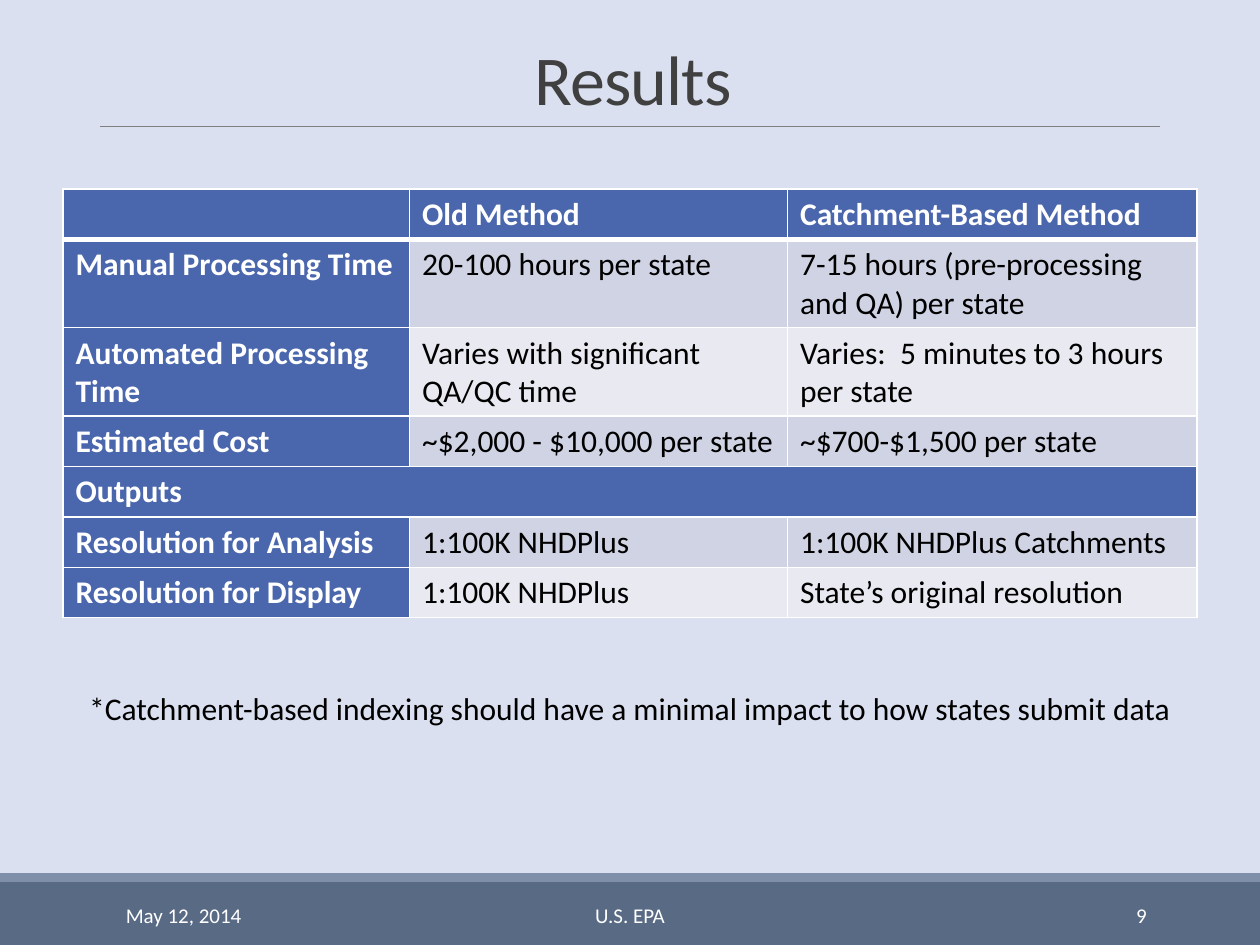
from dataclasses import dataclass

from lxml.etree import SubElement
from pptx import Presentation
from pptx.dml.color import RGBColor
from pptx.enum.shapes import MSO_CONNECTOR as Connector, MSO_SHAPE as Shape
from pptx.enum.text import MSO_ANCHOR as Anchor, PP_ALIGN as Align
from pptx.oxml.ns import qn
from pptx.util import Inches, Pt


@dataclass(frozen=True)
class Theme:
    """Colours, font and type sizes of the deck."""
    font: str = "Calibri"
    background: str = "DAE0EF"
    footer: str = "596A85"
    footer_edge: str = "7F8FA9"
    rule: str = "808080"
    heading: str = "404040"
    ink: str = "000000"
    white: str = "FFFFFF"
    header: str = "4A66AC"
    bands: tuple = ("E9EAF1", "D0D3E3")
    title_size: int = 40
    body_size: int = 18
    footer_size: int = 12


@dataclass(frozen=True)
class Box:
    """A region of the slide, measured in grid columns and rows."""
    left: float
    top: float
    width: float
    height: float

    def lengths(self):
        """Return left, top, width and height as slide lengths."""
        return [grid(n) for n in (self.left, self.top, self.width, self.height)]


THEME = Theme()
COLUMNS, ROWS = 100, 75
ROWS_OF_TEXT = [
    ("", "Old Method", "Catchment-Based Method"),
    ("Manual Processing Time", "20-100 hours per state",
     "7-15 hours (pre-processing and QA) per state"),
    ("Automated Processing Time", "Varies with significant QA/QC time",
     "Varies:  5 minutes to 3 hours per state"),
    ("Estimated Cost", "~$2,000 - $10,000 per state", "~$700-$1,500 per state"),
    ("Outputs",),
    ("Resolution for Analysis", "1:100K NHDPlus", "1:100K NHDPlus Catchments"),
    ("Resolution for Display", "1:100K NHDPlus", "State’s original resolution"),
]
TALL_ROWS = (1, 2)


def grid(count):
    """Turn a number of grid steps into a length."""
    return Inches(count / 10)


def colour(value):
    """Turn a hex value into a colour."""
    return RGBColor.from_string(value)


def style_text(frame, size, ink, bold=False):
    """Format every run of a text frame."""
    for para in frame.paragraphs:
        for span in para.runs:
            span.font.name = THEME.font
            span.font.size = Pt(size)
            span.font.bold = bold
            span.font.color.rgb = colour(ink)


def add_text(page, box, text, size, ink, align=Align.LEFT, anchor=Anchor.TOP):
    """Place one line of wrapped text and return its paragraph."""
    frame = page.shapes.add_textbox(*box.lengths()).text_frame
    frame.word_wrap = True
    frame.vertical_anchor = anchor
    frame.text = text
    para = frame.paragraphs[0]
    para.alignment = align
    style_text(frame, size, ink)
    return para


def add_band(page, box, fill):
    """Place a plain filled rectangle."""
    band = page.shapes.add_shape(Shape.RECTANGLE, *box.lengths())
    band.shadow.inherit = False
    band.fill.solid()
    band.fill.fore_color.rgb = colour(fill)
    band.line.fill.background()


def add_title(page, box):
    """Place the title with the rule along the bottom of its box."""
    para = add_text(page, box, "Results", THEME.title_size, THEME.heading,
                    Align.CENTER, Anchor.BOTTOM)
    para.line_spacing = 0.85
    para.runs[0].font._element.set("spc", "-50")
    bottom = grid(box.top + box.height)
    margin = 7.9
    rule = page.shapes.add_connector(Connector.STRAIGHT, grid(margin), bottom,
                                     grid(COLUMNS - margin), bottom)
    rule.line.color.rgb = colour(THEME.rule)
    rule.line.width = Pt(0.5)
    SubElement(rule._element.spPr, qn("a:effectLst"))


def set_borders(cell, top, bottom):
    """Draw white borders, with the given top and bottom widths."""
    properties = cell._tc.get_or_add_tcPr()
    for side, width in zip("LRTB", (1, 1, top, bottom)):
        line = SubElement(properties, qn(f"a:ln{side}"), w=str(Pt(width)))
        fill = SubElement(line, qn("a:solidFill"))
        SubElement(fill, qn("a:srgbClr"), val=THEME.white)


def add_results(page, box):
    """Place the comparison table."""
    widths = (27.5, 30, 32.5)
    table = page.shapes.add_table(len(ROWS_OF_TEXT), len(widths),
                                  *box.lengths()).table
    for column, width in zip(table.columns, widths):
        column.width = grid(width)
    for r, texts in enumerate(ROWS_OF_TEXT):
        table.rows[r].height = grid(7 if r in TALL_ROWS else 4)
        section = len(texts) == 1
        for c in range(len(widths)):
            cell = table.cell(r, c)
            heading = r == 0 or c == 0 or section
            set_borders(cell, 3 if r == 1 else 1, 3 if r == 0 else 1)
            cell.fill.solid()
            cell.fill.fore_color.rgb = colour(
                THEME.header if heading else THEME.bands[r % 2])
            if c < len(texts) and texts[c]:
                cell.text_frame.text = texts[c]
                style_text(cell.text_frame, THEME.body_size,
                           THEME.white if heading else THEME.ink, heading)
        if section:
            table.cell(r, 0).merge(table.cell(r, len(widths) - 1))


def add_footer(page, box):
    """Place the footer bands with date, owner and page number."""
    edge = 0.7
    add_band(page, box, THEME.footer)
    add_band(page, Box(box.left, box.top - edge, box.width, edge),
             THEME.footer_edge)
    for left, width, text, align in (
            (9, 20.3, "May 12, 2014", Align.LEFT),
            (30.2, 39.6, "U.S. EPA", Align.CENTER),
            (81.2, 10.8, "9", Align.RIGHT)):
        add_text(page, Box(box.left + left, box.top + 0.6, width, 4), text,
                 THEME.footer_size, THEME.white, align, Anchor.MIDDLE)


def main():
    """Build the results slide and save the deck."""
    deck = Presentation()
    deck.slide_width, deck.slide_height = grid(COLUMNS), grid(ROWS)
    page = deck.slides.add_slide(deck.slide_layouts[6])
    page.background.fill.solid()
    page.background.fill.fore_color.rgb = colour(THEME.background)
    add_footer(page, Box(0, 70, COLUMNS, 5))
    add_title(page, Box(9, 3.1, 82.5, 6.9))
    add_results(page, Box(5, 15, 90, 34.3))
    add_text(page, Box(5, 54.2, 90, 4),
             "*Catchment-based indexing should have a minimal impact"
             " to how states submit data",
             THEME.body_size, THEME.ink, Align.CENTER)
    deck.save("out.pptx")


if __name__ == "__main__":
    main()
